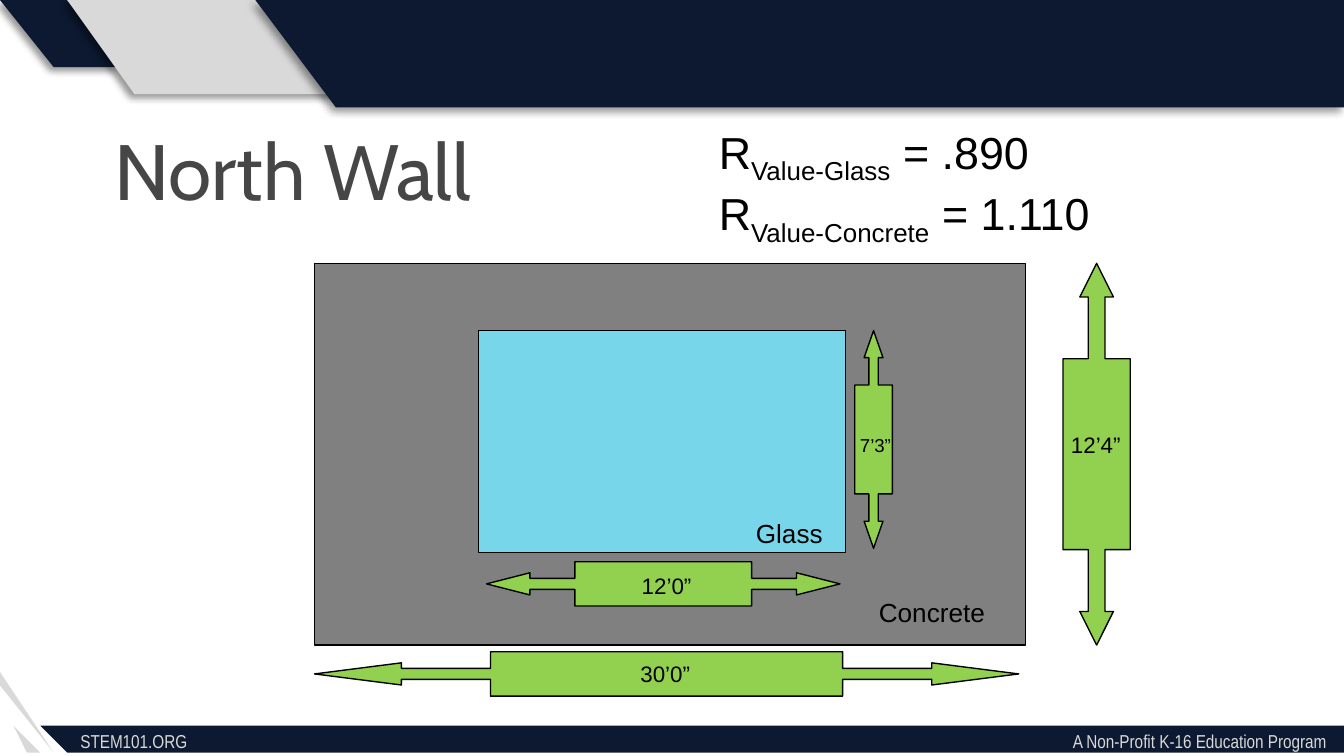
"""Build the North Wall slide on a grid of 100 columns, each a tenth of an inch."""
from dataclasses import dataclass

from lxml import etree
from pptx import Presentation
from pptx import util as u
from pptx.dml.color import RGBColor
from pptx.enum import shapes, text
from pptx.oxml import ns

CELL = u.Inches(0.1)
NAVY, SILVER, BLACK, LIME = "0C1930", "D9D9D9", "000000", "92D050"
RECT = shapes.MSO_SHAPE.RECTANGLE
ACROSS = shapes.MSO_SHAPE.LEFT_RIGHT_ARROW_CALLOUT
UPRIGHT = shapes.MSO_SHAPE.UP_DOWN_ARROW_CALLOUT
LEFT, CENTER, RIGHT = text.PP_ALIGN.LEFT, text.PP_ALIGN.CENTER, text.PP_ALIGN.RIGHT
Area = tuple[float, float, float, float]


@dataclass(frozen=True)
class Band:
    """A flat polygon of the slide frame, in grid cells."""
    points: tuple[tuple[float, float], ...]
    color: str
    shadow: bool = False


@dataclass(frozen=True)
class Panel:
    """A wall surface with its name."""
    area: Area
    color: str
    name: str
    name_area: Area
    align: text.PP_ALIGN


@dataclass(frozen=True)
class Dimension:
    """A double arrow with its measurement."""
    kind: shapes.MSO_SHAPE
    area: Area
    head: float
    label: str
    label_area: Area
    size: int = 12


BANDS = (
    Band(((4.5, 5.3), (0, -0.2), (4.8, -0.2), (9.3, 5.3)), NAVY, True),
    Band(((10.3, 6.8), (4.7, -0.2), (20.4, -0.2), (25.9, 6.9)), SILVER, True),
    Band(((3.1, 56.3), (2.5, 56.3), (0.9, 54), (1.4, 54)), SILVER),
    Band(((4.5, 56.2), (3.9, 56.2), (0, 51.3), (0, 50.4)), SILVER),
    Band(((24.9, 7.9), (18.6, -0.1), (100.2, -0.1), (100.4, 8.2)), NAVY, True),
    Band(((100.6, 56.5), (5.1, 56.4), (3.3, 54.2), (100.7, 54.2)), NAVY),
)
PANELS = (
    Panel((23.4, 19.6, 52.9, 28.4), "808080", "Concrete", (64.4, 43.9, 14.2, 3.4), LEFT),
    Panel((35.6, 24.6, 27.3, 16.5), "78D6EA", "Glass", (35.7, 38, 26.5, 3.4), RIGHT),
)
DIMENSIONS = (
    Dimension(UPRIGHT, (79.1, 19.6, 5, 28.4), 0.5, "12’4”", (78.7, 31.6, 6.6, 3)),
    Dimension(ACROSS, (23.4, 48.5, 52.4, 3.3), 1.96, "30’0”", (36.7, 48.6, 25.6, 3)),
    Dimension(ACROSS, (36.2, 41.8, 26.3, 3.3), 0.98, "12’0”", (42.9, 42.1, 13.4, 3)),
    Dimension(UPRIGHT, (63.6, 24.6, 2.8, 16.2), 0.72, "7’3”", (63, 31.8, 5.1, 2.7), 10),
)
R_VALUES = (("Value-Glass", " = .890"), ("Value-Concrete", " = 1.110"))


def cells(*values: float) -> list[u.Emu]:
    """Turn grid cells into lengths."""
    return [u.Emu(round(value * CELL)) for value in values]


def paint(target, color: str) -> None:
    """Give a fill or a line a solid colour."""
    target.solid()
    target.fore_color.rgb = RGBColor.from_string(color)


def write(para, words: str, *, size: float, font: str = "Arial", color: str = BLACK,
          align: text.PP_ALIGN = LEFT, baseline: int = 0) -> None:
    """Add one formatted span of text to a paragraph."""
    para.alignment = align
    span = para.add_run()
    span.text = words
    span.font.size, span.font.name = u.Pt(size), font
    span.font.color.rgb = RGBColor.from_string(color)
    if baseline:
        span.font._element.set("baseline", str(baseline * 1000))


def add_box(page, area: Area, wrap: bool = True):
    """Add an empty text box and return its text frame."""
    frame = page.shapes.add_textbox(*cells(*area)).text_frame
    frame.word_wrap = wrap
    return frame


def add_band(page, band: Band) -> None:
    """Draw one polygon of the frame."""
    first, *rest = band.points
    builder = page.shapes.build_freeform(*first, scale=CELL)
    builder.add_line_segments(rest, close=True)
    shape = builder.convert_to_shape()
    shape.shadow.inherit = False
    paint(shape.fill, band.color)
    shape.line.fill.background()
    if band.shadow:
        effects = shape._element.spPr.find(ns.qn("a:effectLst"))
        outer = etree.SubElement(effects, ns.qn("a:outerShdw"), blurRad=str(u.Pt(4)),
                                 dist=str(u.Pt(3)), dir=str(135 * 60000),
                                 algn="tr", rotWithShape="0")
        tint = etree.SubElement(outer, ns.qn("a:srgbClr"), val=BLACK)
        etree.SubElement(tint, ns.qn("a:alpha"), val="40000")


def add_outlined(page, kind: shapes.MSO_SHAPE, area: Area, color: str):
    """Add a filled shape with a thin black outline."""
    shape = page.shapes.add_shape(kind, *cells(*area))
    shape.shadow.inherit = False
    paint(shape.fill, color)
    paint(shape.line.fill, BLACK)
    shape.line.width = u.Pt(0.75)
    return shape


def add_panel(page, panel: Panel) -> None:
    """Draw a wall surface and its name."""
    add_outlined(page, RECT, panel.area, panel.color)
    write(add_box(page, panel.name_area).paragraphs[0], panel.name, size=14, align=panel.align)


def add_dimension(page, item: Dimension) -> None:
    """Draw a double arrow and its measurement."""
    arrow = add_outlined(page, item.kind, item.area, LIME)
    for index, value in enumerate((0.25, 0.25, item.head, 0.5)):
        arrow.adjustments[index] = value
    align = CENTER if item.kind == ACROSS else LEFT
    write(add_box(page, item.label_area).paragraphs[0], item.label, size=item.size, align=align)


def add_footer(page) -> None:
    """Write the footer with its second part at a right tab."""
    para = add_box(page, (5, 53.8, 95, 2.7)).paragraphs[0]
    tabs = etree.SubElement(para._p.get_or_add_pPr(), ns.qn("a:tabLst"))
    etree.SubElement(tabs, ns.qn("a:tab"), pos=str(cells(92.7)[0]), algn="r")
    write(para, "STEM101.ORG\tA Non-Profit K-16 Education Program",
          size=10, font="Arial Narrow", color=SILVER)


def add_title(page) -> None:
    """Place and format the title."""
    title = page.shapes.title
    title.left, title.top, title.width, title.height = cells(7.5, 8.6, 85, 12.5)
    title.text_frame.vertical_anchor = text.MSO_ANCHOR.TOP
    title.text_frame.auto_size = text.MSO_AUTO_SIZE.NONE
    write(title.text_frame.paragraphs[0], "North Wall", size=42, font="Cabin", color="464646")


def add_r_values(page) -> None:
    """List the R values with lowered names."""
    frame = add_box(page, (52.5, 8.8, 32, 9), wrap=False)
    for index, (name, value) in enumerate(R_VALUES):
        para = frame.add_paragraph() if index else frame.paragraphs[0]
        for words, baseline in (("R", 0), (name, -25), (value, 0)):
            write(para, words, size=24, baseline=baseline)


def main() -> None:
    """Build and save the deck."""
    deck = Presentation()
    deck.slide_width, deck.slide_height = cells(100, 56.25)
    page = deck.slides.add_slide(deck.slide_layouts.get_by_name("Title Only"))
    for band in BANDS:
        add_band(page, band)
    add_footer(page)
    add_title(page)
    add_r_values(page)
    for panel in PANELS:
        add_panel(page, panel)
    for item in DIMENSIONS:
        add_dimension(page, item)
    deck.save("out.pptx")


if __name__ == "__main__":
    main()
